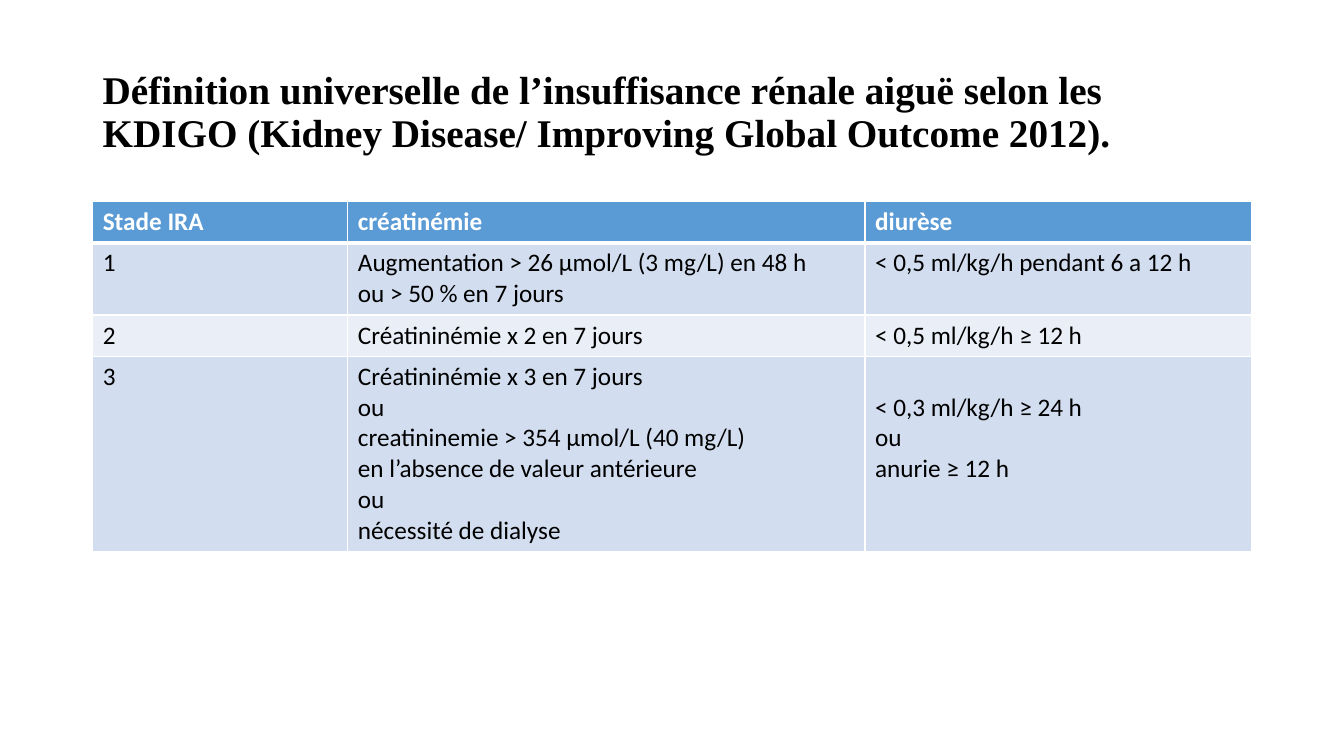
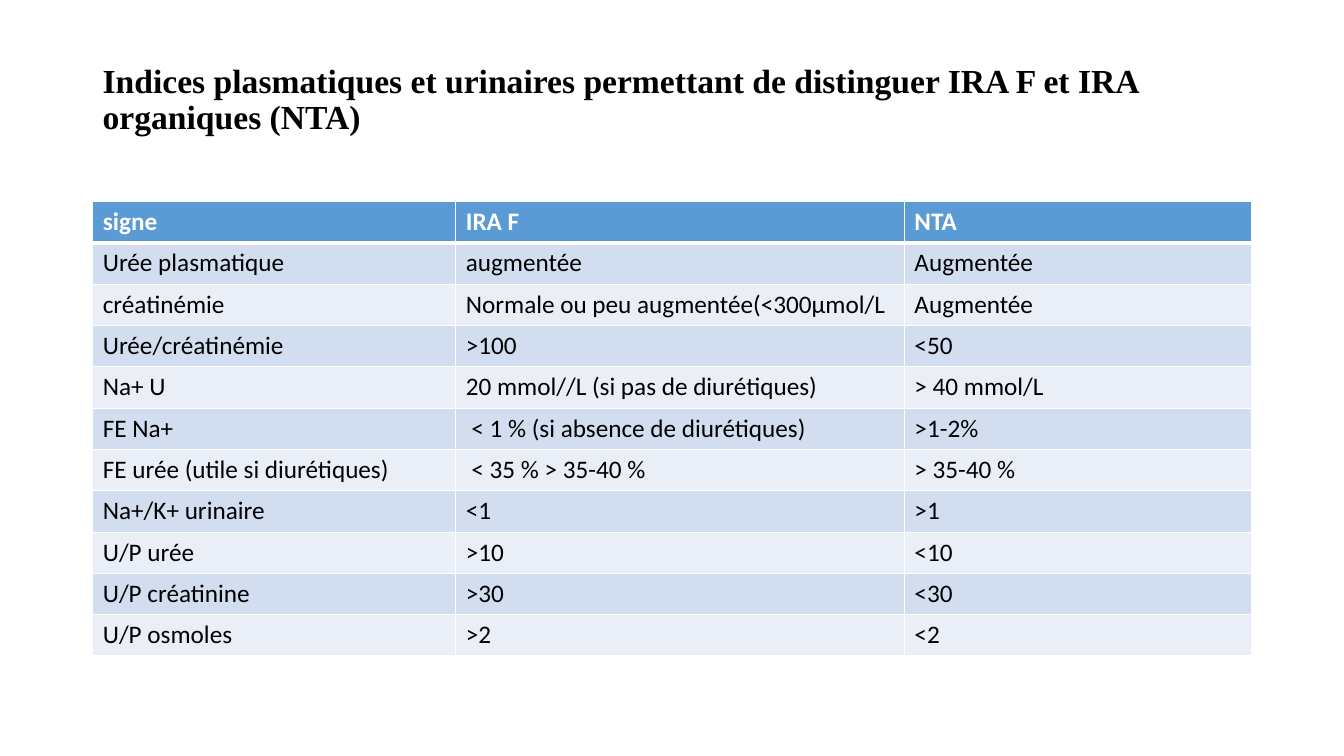
from dataclasses import dataclass

from lxml.etree import SubElement
from pptx import Presentation
from pptx.dml.color import RGBColor as RGB
from pptx.enum.text import MSO_ANCHOR as Anchor
from pptx.oxml.ns import qn
from pptx.util import Inches, Pt


@dataclass(frozen=True)
class Theme:
    title_font: str = "Times New Roman"
    body_font: str = "Calibri"
    body_size: int = 18
    ink: str = "000000"
    white: str = "FFFFFF"
    header: str = "5B9BD5"
    bands: tuple = ("D2DEEF", "EAEFF7")
    rule: int = 1
    header_rule: int = 3


theme = Theme()
LEFT, WIDTH = Inches(0.92), Inches(11.5)
TITLE_TOP, TABLE_TOP = Inches(0.4), Inches(2)
ROW, LINE = 0.41, 0.305  # one-line row and each further line, in inches

# Content: a line break in a cell starts a new paragraph
slides = [
    {
        "title": "Définition universelle de l’insuffisance rénale aiguë selon les "
                 "KDIGO (Kidney Disease/ Improving Global Outcome 2012).",
        "title_size": 28,
        "title_height": 1.45,
        "columns": (2.53, 5.13, 3.83),
        "lowered": {(3, 2)},  # cells whose text starts one line lower
        "rows": [
            ("Stade IRA", "créatinémie", "diurèse"),
            ("1", "Augmentation > 26 μmol/L (3 mg/L) en 48 h\nou > 50 % en 7 jours",
             "< 0,5 ml/kg/h pendant 6 a 12 h"),
            ("2", "Créatininémie x 2 en 7 jours", "< 0,5 ml/kg/h ≥ 12 h"),
            ("3", "Créatininémie x 3 en 7 jours\nou\n"
                  "creatininemie > 354 μmol/L (40 mg/L)\n"
                  "en l’absence de valeur antérieure\nou\nnécessité de dialyse",
             "< 0,3 ml/kg/h ≥ 24 h\nou\nanurie ≥ 12 h"),
        ],
    },
    {
        "title": "Indices plasmatiques et urinaires permettant de distinguer "
                 "IRA F et IRA organiques (NTA)",
        "title_size": 24,
        "title_height": 1.19,
        "columns": (3.6, 4.45, 3.44),
        "lowered": set(),
        "rows": [
            ("signe", "IRA F", "NTA"),
            ("Urée plasmatique", "augmentée", "Augmentée"),
            ("créatinémie", "Normale ou peu augmentée(<300μmol/L", "Augmentée"),
            ("Urée/créatinémie", ">100", "<50"),
            ("Na+ U", "20 mmol//L (si pas de diurétiques)", "> 40 mmol/L"),
            ("FE Na+", " < 1 % (si absence de diurétiques)", ">1-2%"),
            ("FE urée (utile si diurétiques)", " < 35 % > 35-40 %", "> 35-40 %"),
            ("Na+/K+ urinaire", "<1", ">1"),
            ("U/P urée", ">10", "<10"),
            ("U/P créatinine", ">30", "<30"),
            ("U/P osmoles", ">2", "<2"),
        ],
    },
]


def style_font(paragraph, name, size, color, bold):
    font = paragraph.font
    font.name, font.size, font.bold = name, Pt(size), bold
    font.color.rgb = RGB.from_string(color)


def add_borders(cell, top, bottom):
    """Must run before the cell's fill is set: borders come first in tcPr."""
    properties = cell._tc.get_or_add_tcPr()
    widths = {"L": theme.rule, "R": theme.rule, "T": top, "B": bottom}
    for side, width in widths.items():
        line = SubElement(properties, qn(f"a:ln{side}"), w=str(Pt(width)))
        fill = SubElement(line, qn("a:solidFill"))
        SubElement(fill, qn("a:srgbClr"), val=theme.white)


prs = Presentation()
prs.slide_width, prs.slide_height = Inches(13.33), Inches(7.5)

for content in slides:
    slide = prs.slides.add_slide(prs.slide_layouts[6])

    # Title
    title = slide.shapes.add_textbox(
        LEFT, TITLE_TOP, WIDTH, Inches(content["title_height"])).text_frame
    title.word_wrap = True
    title.vertical_anchor = Anchor.MIDDLE
    heading = title.paragraphs[0]
    heading.text = content["title"]
    heading.line_spacing = 0.9
    style_font(heading, theme.title_font, content["title_size"], theme.ink, True)

    # Table grid
    rows = content["rows"]
    heights = [Inches(ROW + LINE * max(text.count("\n") for text in row)) for row in rows]
    table = slide.shapes.add_table(
        len(rows), len(content["columns"]), LEFT, TABLE_TOP, WIDTH, sum(heights)).table
    table.horz_banding = False
    for column, width in zip(table.columns, content["columns"]):
        column.width = Inches(width)

    # Cells
    for r, row in enumerate(rows):
        table.rows[r].height = heights[r]
        is_header = r == 0
        fill = theme.header if is_header else theme.bands[(r - 1) % 2]
        color = theme.white if is_header else theme.ink
        top = theme.header_rule if r == 1 else theme.rule
        bottom = theme.header_rule if is_header else theme.rule
        for c, text in enumerate(row):
            cell = table.cell(r, c)
            add_borders(cell, top, bottom)
            cell.fill.solid()
            cell.fill.fore_color.rgb = RGB.from_string(fill)
            cell.text = text
            if (r, c) in content["lowered"]:
                cell.margin_top = Inches(0.05 + LINE)
            for paragraph in cell.text_frame.paragraphs:
                style_font(paragraph, theme.body_font, theme.body_size, color, is_header)

prs.save("out.pptx")
